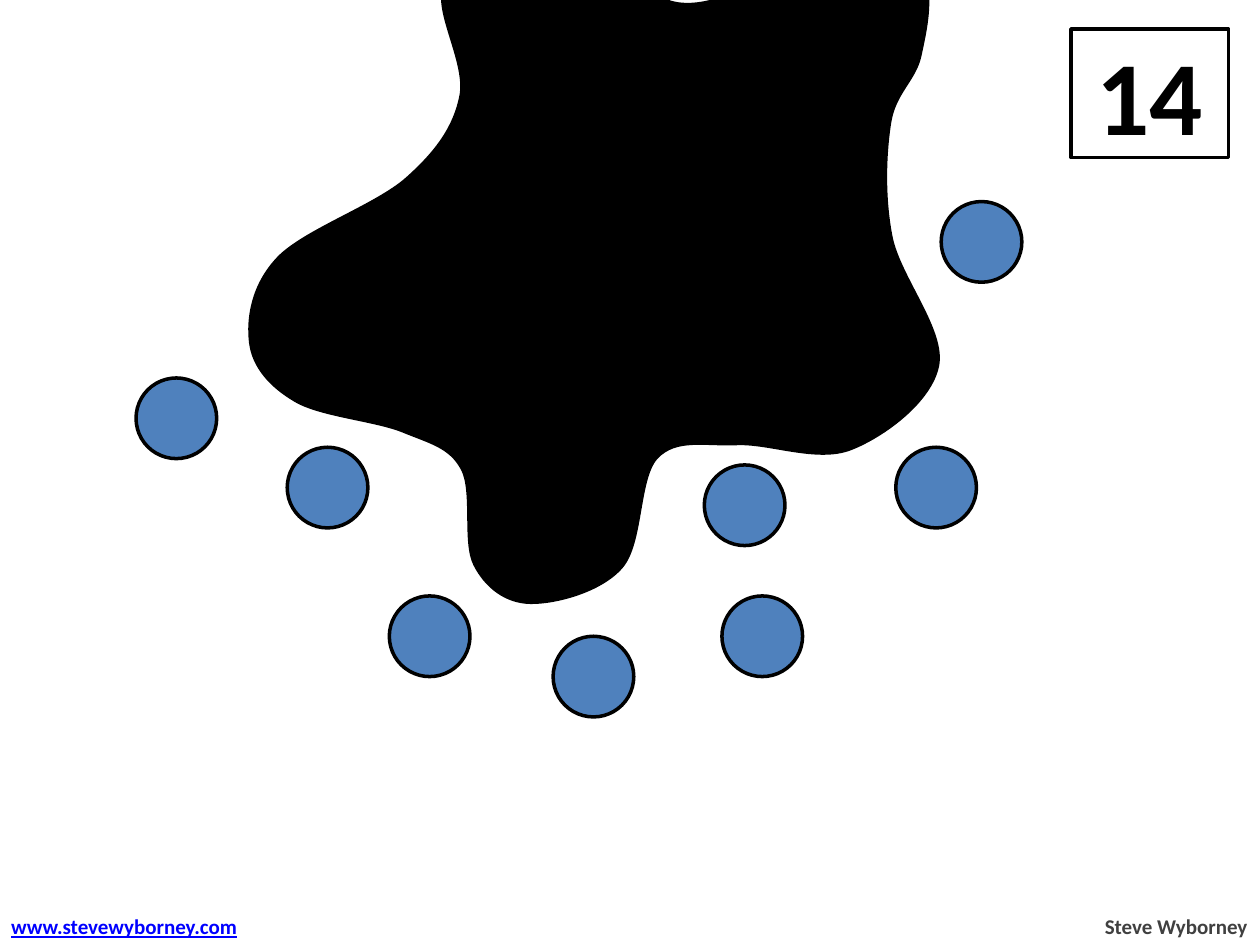
from lxml.etree import SubElement
from pptx import Presentation
from pptx.dml.color import RGBColor
from pptx.enum.shapes import MSO_SHAPE as Shape
from pptx.enum.text import MSO_ANCHOR as Anchor, MSO_AUTO_SIZE as AutoSize, PP_ALIGN as Align
from pptx.oxml.ns import qn
from pptx.util import Inches, Pt

BLACK = "000000"
WHITE = "FFFFFF"
BLUE = "4F81BD"
DOT_SIZE = 0.64
DOTS = [
    (1.08, 3), (2.28, 3.55), (3.09, 4.73), (4.39, 5.05),
    (5.73, 4.73), (5.59, 3.69), (7.11, 3.55), (7.47, 1.6),
]
SPLAT = [
    (2.35, 3.18), (1.99, 2.72), (2.21, 2.05), (3.23, 1.42), (3.66, 0.76),
    (3.52, -0.07), (3.93, -0.42), (4.61, -0.42), (5.37, 0.03), (6.13, -0.17),
    (6.7, -0.47), (7.31, -0.2), (7.3, 0.44), (7.06, 0.97), (7.07, 1.88),
    (7.44, 2.9), (6.75, 3.56), (5.85, 3.52), (5.21, 3.63), (4.93, 4.5),
    (4.21, 4.78), (3.77, 4.48), (3.67, 3.72), (3.2, 3.42),
]


def color(value):
    return RGBColor.from_string(value)


def paint(shape, fill):
    shape.shadow.inherit = False
    shape.fill.solid()
    shape.fill.fore_color.rgb = color(fill)
    shape.line.color.rgb = color(BLACK)
    shape.line.width = Pt(2)


def write(para, text, size, ink, align, underline=False):
    para.alignment = align
    span = para.add_run()
    span.text = text
    span.font.name = "Calibri"
    span.font.size = Pt(size)
    span.font.bold = True
    span.font.underline = underline
    span.font.color.rgb = color(ink)


def add_shape(page, kind, left, top, width, height, fill):
    shape = page.shapes.add_shape(
        kind, Inches(left), Inches(top), Inches(width), Inches(height)
    )
    paint(shape, fill)
    return shape


def add_number(page, text):
    box = add_shape(page, Shape.RECTANGLE, 8.5, 0.23, 1.25, 1.02, WHITE)
    box.text_frame.vertical_anchor = Anchor.MIDDLE
    write(box.text_frame.paragraphs[0], text, 60, BLACK, Align.CENTER)


def add_footer(page, text, left, width, ink, align, underline=False):
    box = page.shapes.add_textbox(
        Inches(left), Inches(7.2), Inches(width), Inches(0.3)
    )
    box.text_frame.word_wrap = False
    box.text_frame.auto_size = AutoSize.SHAPE_TO_FIT_TEXT
    write(box.text_frame.paragraphs[0], text, 12, ink, align, underline)


def curve_controls(before, start, end, after):
    first = [s + (e - b) / 6 for b, s, e in zip(before, start, end)]
    second = [e - (a - s) / 6 for s, e, a in zip(start, end, after)]
    return first, second, end


def add_smooth_outline(page, knots, fill):
    points = [(Inches(x), Inches(y)) for x, y in knots]
    builder = page.shapes.build_freeform(*points[0])
    builder.add_line_segments(points[1:] + points[:1], close=True)
    shape = builder.convert_to_shape()
    paint(shape, fill)

    count = len(points)
    segments = list(shape._element.iter(qn("a:lnTo")))
    for i, segment in enumerate(segments):
        around = [points[(i + step) % count] for step in (-1, 0, 1, 2)]
        segment.remove(segment[0])
        curve = SubElement(segment.getparent(), qn("a:cubicBezTo"))
        for x, y in curve_controls(*around):
            SubElement(
                curve, qn("a:pt"),
                x=str(round(x - shape.left)), y=str(round(y - shape.top)),
            )
        segment.getparent().replace(segment, curve)


def main():
    deck = Presentation()
    deck.slide_width, deck.slide_height = Inches(10), Inches(7.5)
    page = deck.slides.add_slide(deck.slide_layouts[6])

    add_number(page, "14")
    for left, top in DOTS:
        add_shape(page, Shape.OVAL, left, top, DOT_SIZE, DOT_SIZE, BLUE)
    add_smooth_outline(page, SPLAT, BLACK)
    add_footer(page, "Steve Wyborney", 8.66, 1.34, "404040", Align.RIGHT)
    add_footer(page, "www.stevewyborney.com", -0.01, 2.05, "0000FF", Align.LEFT, True)

    deck.save("out.pptx")


if __name__ == "__main__":
    main()
